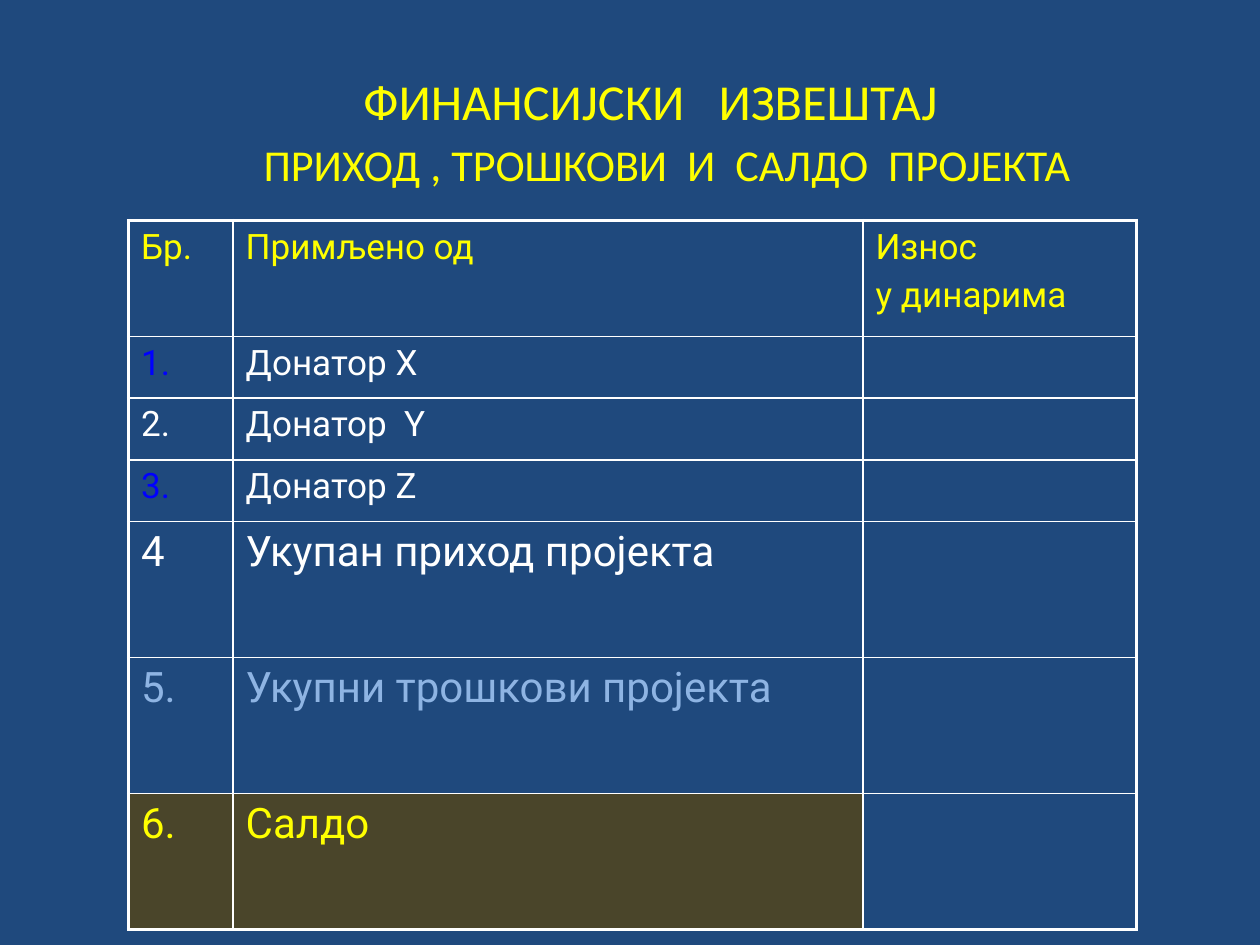
from typing import NamedTuple

from lxml import etree
from pptx import Presentation
from pptx.dml.color import RGBColor
from pptx.enum.text import MSO_ANCHOR, PP_ALIGN
from pptx.oxml.ns import qn
from pptx.util import Inches, Pt

MIDDLE = MSO_ANCHOR.MIDDLE
CENTER = PP_ALIGN.CENTER

COLORS = {
    "navy": "1F497D",
    "yellow": "FFFF00",
    "white": "FFFFFF",
    "blue": "0000FF",
    "sky": "8EB4E3",
    "olive": "4A452A",
}
THIN, THICK = 1, 2.25
COLUMN_WIDTHS = (0.83, 5, 2.17)


class Heading(NamedTuple):
    text: str
    size: float
    left: float
    top: float


class Row(NamedTuple):
    texts: tuple[str, str, str]
    height: float
    size: float
    number_color: str
    color: str
    filled: bool = False


HEADINGS = (
    Heading("ФИНАНСИЈСКИ   ИЗВЕШТАЈ", 28.8, 1.0, 0.55),
    Heading("ПРИХОД , ТРОШКОВИ  И  САЛДО  ПРОЈЕКТА", 25.2, 1.13, 1.05),
)

ROWS = (
    Row(("Бр.", "Примљено од", "Износ\nу динарима"), 0.92, 20, "yellow", "yellow"),
    Row(("1.", "Донатор X", ""), 0.49, 20, "blue", "white"),
    Row(("2.", "Донатор  Y", ""), 0.49, 20, "white", "white"),
    Row(("3.", "Донатор Z", ""), 0.49, 20, "blue", "white"),
    Row(("4", "Укупан приход пројекта", ""), 1.08, 24, "white", "white"),
    Row(("5.", "Укупни трошкови пројекта", ""), 1.08, 24, "sky", "sky"),
    Row(("6.", "Салдо", ""), 1.08, 24, "yellow", "yellow", filled=True),
)


def rgb(name: str) -> RGBColor:
    return RGBColor.from_string(COLORS[name])


def write(para, text: str, font_name: str, size: float, color: str) -> None:
    span = para.add_run()
    span.text = text
    for key, value in {"name": font_name, "size": Pt(size), "bold": False}.items():
        setattr(span.font, key, value)
    span.font.color.rgb = rgb(color)


def add_heading(page, heading: Heading) -> None:
    box = page.shapes.add_textbox(
        Inches(heading.left), Inches(heading.top), Inches(8.33), Inches(0.5)
    )
    frame = box.text_frame
    settings = {"word_wrap": True, "vertical_anchor": MIDDLE,
                "margin_top": 0, "margin_bottom": 0}
    for key, value in settings.items():
        setattr(frame, key, value)
    para = frame.paragraphs[0]
    para.alignment = CENTER
    write(para, heading.text, "Calibri", heading.size, "yellow")


def add_borders(cell, widths: dict[str, float]) -> None:
    properties = cell._tc.get_or_add_tcPr()
    for side, width in widths.items():
        line = etree.SubElement(properties, qn(f"a:ln{side}"), w=str(Pt(width)))
        fill = etree.SubElement(line, qn("a:solidFill"))
        etree.SubElement(fill, qn("a:srgbClr"), val=COLORS["white"])


def fill_cell(cell, row: Row, column: int) -> None:
    if row.filled and column < 2:
        cell.fill.solid()
        cell.fill.fore_color.rgb = rgb("olive")
    else:
        cell.fill.background()
    if not row.texts[column]:
        return
    color = row.color if column else row.number_color
    frame = cell.text_frame
    for index, text in enumerate(row.texts[column].split("\n")):
        para = frame.add_paragraph() if index else frame.paragraphs[0]
        if index:
            para.space_before = Pt(0.2 * row.size)
        write(para, text, "Roboto", row.size, color)


def add_report_table(page) -> None:
    last_row, last_column = len(ROWS) - 1, len(COLUMN_WIDTHS) - 1
    table = page.shapes.add_table(
        len(ROWS), len(COLUMN_WIDTHS), Inches(1.02), Inches(1.75),
        Inches(sum(COLUMN_WIDTHS)), Inches(sum(row.height for row in ROWS)),
    ).table
    table.first_row = table.horz_banding = False
    for column, width in enumerate(COLUMN_WIDTHS):
        table.columns[column].width = Inches(width)
    for index, row in enumerate(ROWS):
        table.rows[index].height = Inches(row.height)
        for column in range(len(COLUMN_WIDTHS)):
            cell = table.cell(index, column)
            # Thick lines only on the outer frame
            outer = {"L": column == 0, "R": column == last_column,
                     "T": index == 0, "B": index == last_row}
            add_borders(cell, {side: THICK if edge else THIN
                               for side, edge in outer.items()})
            fill_cell(cell, row, column)


def main() -> None:
    deck = Presentation()
    deck.slide_width, deck.slide_height = Inches(10), Inches(7.5)
    page = deck.slides.add_slide(deck.slide_layouts[6])
    page.background.fill.solid()
    page.background.fill.fore_color.rgb = rgb("navy")

    # Two-line title
    for heading in HEADINGS:
        add_heading(page, heading)

    # Income, costs and balance
    add_report_table(page)
    deck.save("out.pptx")


if __name__ == "__main__":
    main()
